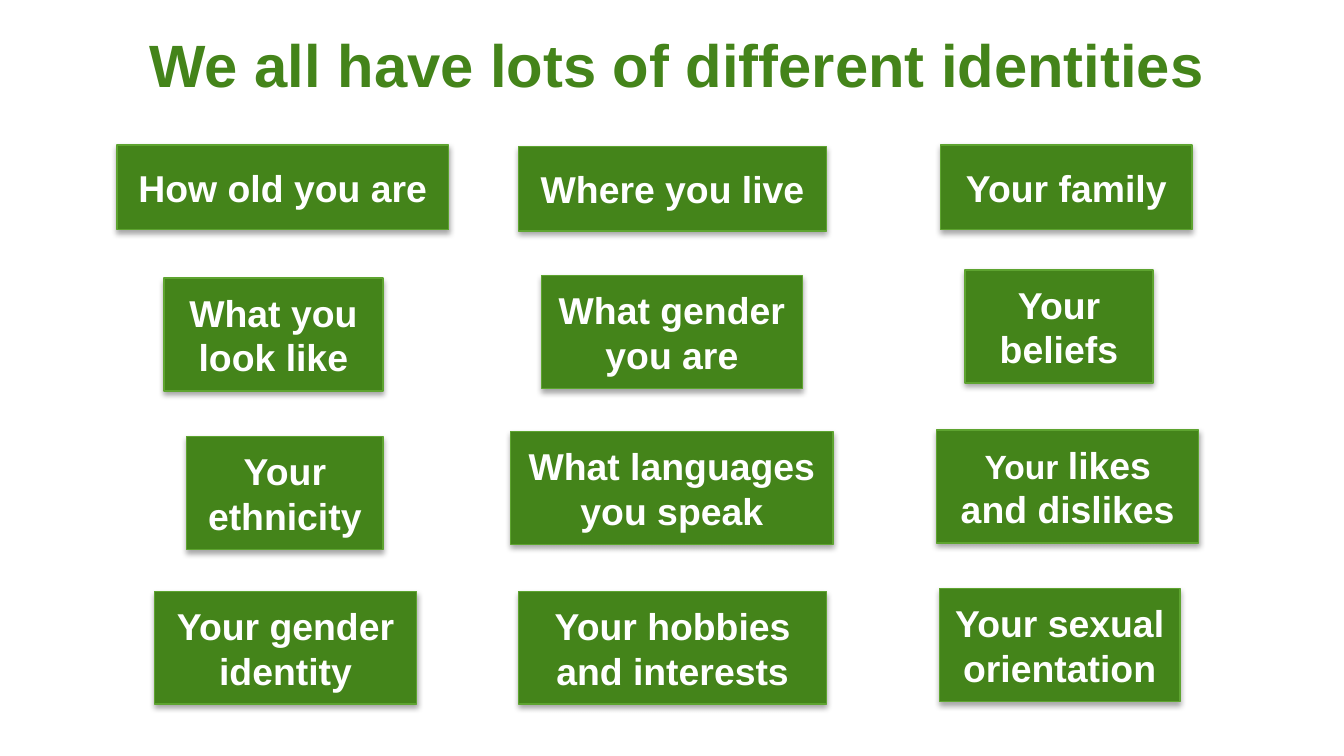
"""Build a slide of green boxes naming the identities that people have."""
import lxml.etree
import pptx
import pptx.dml.color
import pptx.enum.shapes
import pptx.enum.text
import pptx.oxml
import pptx.oxml.ns
import pptx.util

Inches = pptx.util.Inches
Pt = pptx.util.Pt
GREEN = pptx.dml.color.RGBColor(0x44, 0x84, 0x1A)
LIGHT_GREEN = pptx.dml.color.RGBColor(0x5E, 0xA4, 0x30)
WHITE = pptx.dml.color.RGBColor(0xFF, 0xFF, 0xFF)

TITLE = "We all have lots of different identities"
ROW_HEIGHTS = (0.63, 0.84, 0.84, 0.84)
COLUMNS = (
    (
        ("How old you are", 0.87, 1.08, 2.47),
        ("What you look like", 1.22, 2.07, 1.63),
        ("Your ethnicity", 1.39, 3.25, 1.46),
        ("Your gender identity", 1.15, 4.4, 1.95),
    ),
    (
        ("Where you live", 3.86, 1.09, 2.29),
        ("What gender you are", 4.03, 2.05, 1.94),
        ("What languages you speak", 3.8, 3.21, 2.4),
        ("Your hobbies and interests", 3.86, 4.4, 2.29),
    ),
    (
        ("Your family", 7, 1.08, 1.87),
        ("Your beliefs", 7.18, 2.01, 1.4),
        (("Your ", "likes and dislikes"), 6.97, 3.2, 1.95),
        ("Your sexual orientation", 6.99, 4.38, 1.79),
    ),
)


def add_text(paragraph, text, size=20, color=WHITE, font="Arial", bold=True):
    """Add a formatted run to a centred paragraph."""
    paragraph.alignment = pptx.enum.text.PP_ALIGN.CENTER
    run = paragraph.add_run()
    run.text = text
    run.font.size = Pt(size)
    run.font.name = font
    run.font.bold = bold
    run.font.color.rgb = color


class IdentitySlide:
    """Hold the style and the current slide."""

    def __init__(self, presentation):
        """Start a title-only slide."""
        self.fill, self.line, self.text_color = GREEN, LIGHT_GREEN, WHITE
        self.slide = presentation.slides.add_slide(presentation.slide_layouts[5])

    def title(self, text, left, top, width, height):
        """Place and fill the title."""
        title = self.slide.shapes.title
        title.left, title.top = Inches(left), Inches(top)
        title.width, title.height = Inches(width), Inches(height)
        frame = title.text_frame
        frame.word_wrap = True
        frame.auto_size = pptx.enum.text.MSO_AUTO_SIZE.NONE
        frame.vertical_anchor = pptx.enum.text.MSO_ANCHOR.TOP
        add_text(frame.paragraphs[0], text, size=32, color=self.fill)

    def box(self, text, left, top, width, height):
        """Add a shadowed box; a pair of texts gets a smaller first part."""
        shape = self.slide.shapes.add_shape(
            pptx.enum.shapes.MSO_SHAPE.RECTANGLE,
            Inches(left), Inches(top), Inches(width), Inches(height),
        )
        shape.fill.solid()
        shape.fill.fore_color.rgb = self.fill
        shape.line.color.rgb = self.line
        shape.line.width = Pt(0.75)
        self.soft_shadow(shape)
        frame = shape.text_frame
        frame.word_wrap = True
        frame.vertical_anchor = pptx.enum.text.MSO_ANCHOR.MIDDLE
        parts = ((text, 20),) if isinstance(text, str) else zip(text, (18, 20))
        for part, size in parts:
            add_text(frame.paragraphs[0], part, size=size, color=self.text_color)

    def soft_shadow(self, shape):
        """Give a shape a soft shadow below it."""
        shape.shadow.inherit = False
        qn = pptx.oxml.ns.qn
        effects = shape.element.spPr.find(qn("a:effectLst"))
        shadow = lxml.etree.SubElement(
            effects, qn("a:outerShdw"), blurRad=str(Pt(3.1)), dist=str(Pt(1.8)),
            dir="5400000", rotWithShape="0",
        )
        color = lxml.etree.SubElement(shadow, qn("a:srgbClr"), val="000000")
        lxml.etree.SubElement(color, qn("a:alpha"), val="35000")


def main():
    """Build and save the presentation."""
    presentation = pptx.Presentation()
    presentation.slide_width = Inches(10)
    presentation.slide_height = Inches(10 * 9 / 16)
    slide = IdentitySlide(presentation)
    slide.title(TITLE, 0.67, 0.16, 8.74, 0.77)
    for column in COLUMNS:
        for (text, left, top, width), height in zip(column, ROW_HEIGHTS):
            slide.box(text, left, top, width, height)
    presentation.save("out.pptx")


if __name__ == "__main__":
    main()
